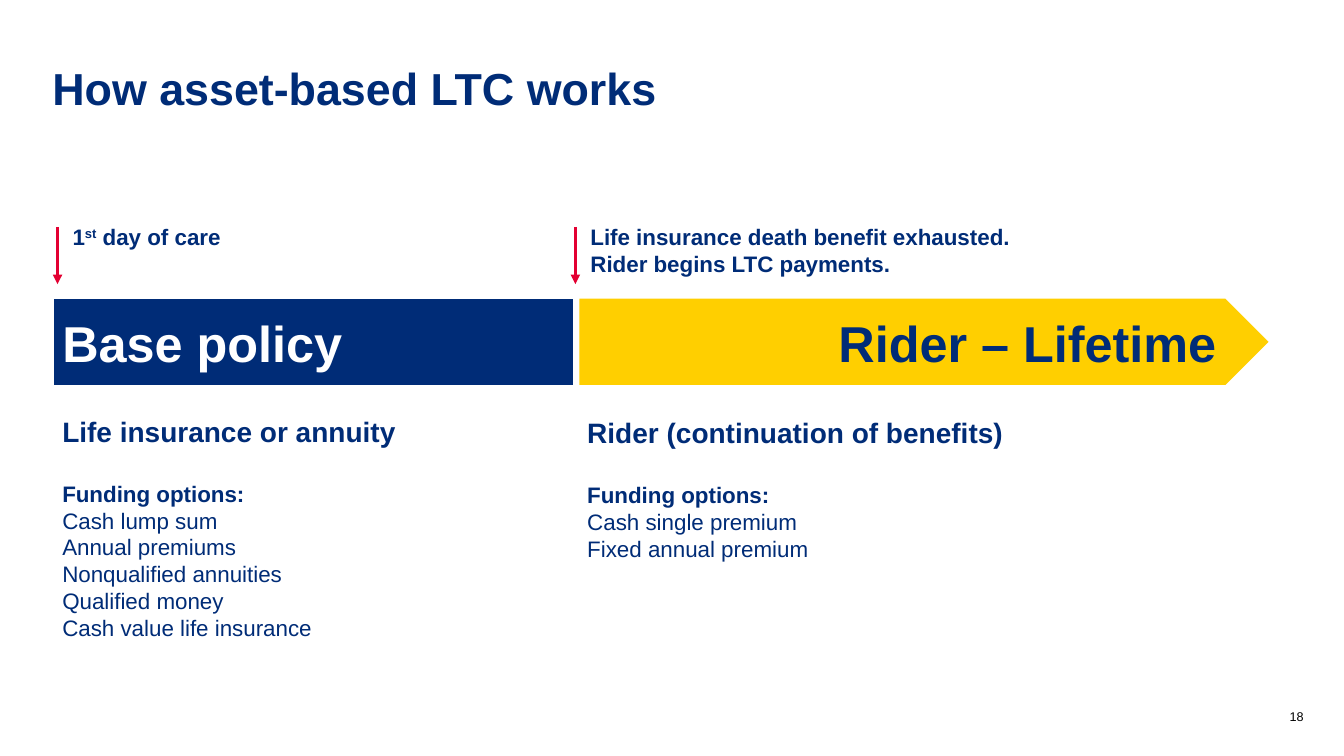
"""Build the slide on how asset-based LTC works."""
from lxml import etree
from pptx import Presentation, util as u
from pptx.dml.color import RGBColor
from pptx.enum import shapes, text
from pptx.oxml import ns

NAVY = RGBColor(0x00, 0x2C, 0x77)
GOLD = RGBColor(0xFF, 0xCF, 0x00)
RED = RGBColor(0xE3, 0x00, 0x32)
WHITE = RGBColor(0xFF, 0xFF, 0xFF)
BLACK = RGBColor(0x00, 0x00, 0x00)

TITLE = "How asset-based LTC works"
PAGE = "18"
FUNDS = "Funding options:"
PHASES = [
    {
        "name": "Base policy", "kind": shapes.MSO_SHAPE.RECTANGLE,
        "fill": NAVY, "ink": WHITE, "align": text.PP_ALIGN.LEFT, "inset": 0.25,
        "left": 1.32, "wide": 13.18, "mark": 1.45,
        "event": [[("1", 0), ("st", 30), (" day of care", 0)]],
        "head": "Life insurance or annuity", "top": 10.31,
        "options": ["Cash lump sum", "Annual premiums", "Nonqualified annuities",
                    "Qualified money", "Cash value life insurance"],
    },
    {
        "name": "Rider – Lifetime", "kind": shapes.MSO_SHAPE.PENTAGON,
        "fill": GOLD, "ink": NAVY, "align": text.PP_ALIGN.RIGHT, "inset": 0.82,
        "left": 14.55, "wide": 17.5, "mark": 14.5,
        "event": [[("Life insurance death benefit exhausted.", 0)],
                  [("Rider begins LTC payments.", 0)]],
        "head": "Rider (continuation of benefits)", "top": 10.34,
        "options": ["Cash single premium", "Fixed annual premium"],
    },
]
BAR_TOP, BAR_HIGH = 7.47, 2.29
MARK_TOP, MARK_END = 5.72, 7.16
NOTE_TOP, NOTE_GAP, NOTE_WIDE = 5.49, 0.13, 13.44
LINE_HIGH, LIST_WIDE = 0.68, 13.18


def style(para, size, ink=NAVY, bold=True):
    for run in para.runs:
        font = run.font
        font.name, font.size, font.bold = "Arial", u.Pt(size), bold
        font.color.rgb = ink


def add_box(slide, left, top, wide, high, pad=True):
    box = slide.shapes.add_textbox(u.Cm(left), u.Cm(top), u.Cm(wide), u.Cm(high))
    frame = box.text_frame
    frame.word_wrap = True
    if not pad:
        frame.margin_left = frame.margin_right = 0
        frame.margin_top = frame.margin_bottom = 0
    return frame


def add_bar(slide, phase):
    bar = slide.shapes.add_shape(phase["kind"], u.Cm(phase["left"]), u.Cm(BAR_TOP),
                                 u.Cm(phase["wide"]), u.Cm(BAR_HIGH))
    bar.shadow.inherit = False
    bar.fill.solid()
    bar.fill.fore_color.rgb = phase["fill"]
    bar.line.color.rgb = WHITE
    bar.line.width = u.Pt(3)
    frame = bar.text_frame
    frame.text = phase["name"]
    frame.vertical_anchor = text.MSO_ANCHOR.MIDDLE
    frame.margin_right = u.Cm(phase["inset"])
    para = frame.paragraphs[0]
    para.alignment = phase["align"]
    style(para, 36, phase["ink"])


def add_mark(slide, left):
    mark = slide.shapes.add_connector(shapes.MSO_CONNECTOR.STRAIGHT, u.Cm(left),
                                      u.Cm(MARK_TOP), u.Cm(left), u.Cm(MARK_END))
    mark.line.color.rgb = RED
    mark.line.width = u.Pt(2.25)
    etree.SubElement(mark.line._get_or_add_ln(), ns.qn("a:tailEnd"), type="triangle")
    etree.SubElement(mark._element.spPr, ns.qn("a:effectLst"))


def add_event(slide, phase):
    lines = phase["event"]
    frame = add_box(slide, phase["mark"] + NOTE_GAP, NOTE_TOP, NOTE_WIDE,
                    0.25 + LINE_HIGH * len(lines))
    for i, parts in enumerate(lines):
        para = frame.add_paragraph() if i else frame.paragraphs[0]
        for word, raised in parts:
            run = para.add_run()
            run.text = word
            if raised:
                run._r.get_or_add_rPr().set("baseline", str(raised * 1000))
        style(para, 16)


def add_list(slide, phase):
    rows = [phase["head"], FUNDS, *phase["options"]]
    frame = add_box(slide, phase["left"], phase["top"], LIST_WIDE,
                    1.3 + LINE_HIGH * len(rows))
    frame.text = "\n".join(rows)
    for i, para in enumerate(frame.paragraphs):
        style(para, 16 if i else 20, bold=i < 2)
    frame.paragraphs[1].space_before = u.Pt(23)


def main():
    deck = Presentation()
    deck.slide_width, deck.slide_height = u.Cm(33.87), u.Cm(19.05)
    slide = deck.slides.add_slide(deck.slide_layouts[6])

    title = add_box(slide, 1.32, 0.81, 31.32, 2.95, pad=False)
    title.text = TITLE
    title.vertical_anchor = text.MSO_ANCHOR.MIDDLE
    title.paragraphs[0].line_spacing = 0.9
    style(title.paragraphs[0], 32)

    for phase in reversed(PHASES):
        add_bar(slide, phase)
    for phase in PHASES:
        add_mark(slide, phase["mark"])
        add_event(slide, phase)
        add_list(slide, phase)

    page = add_box(slide, 31.6, 17.6, 1.25, 0.64, pad=False)
    page.text = PAGE
    page.vertical_anchor = text.MSO_ANCHOR.BOTTOM
    page.paragraphs[0].alignment = text.PP_ALIGN.RIGHT
    style(page.paragraphs[0], 9, BLACK, False)

    deck.save("out.pptx")


if __name__ == "__main__":
    main()
